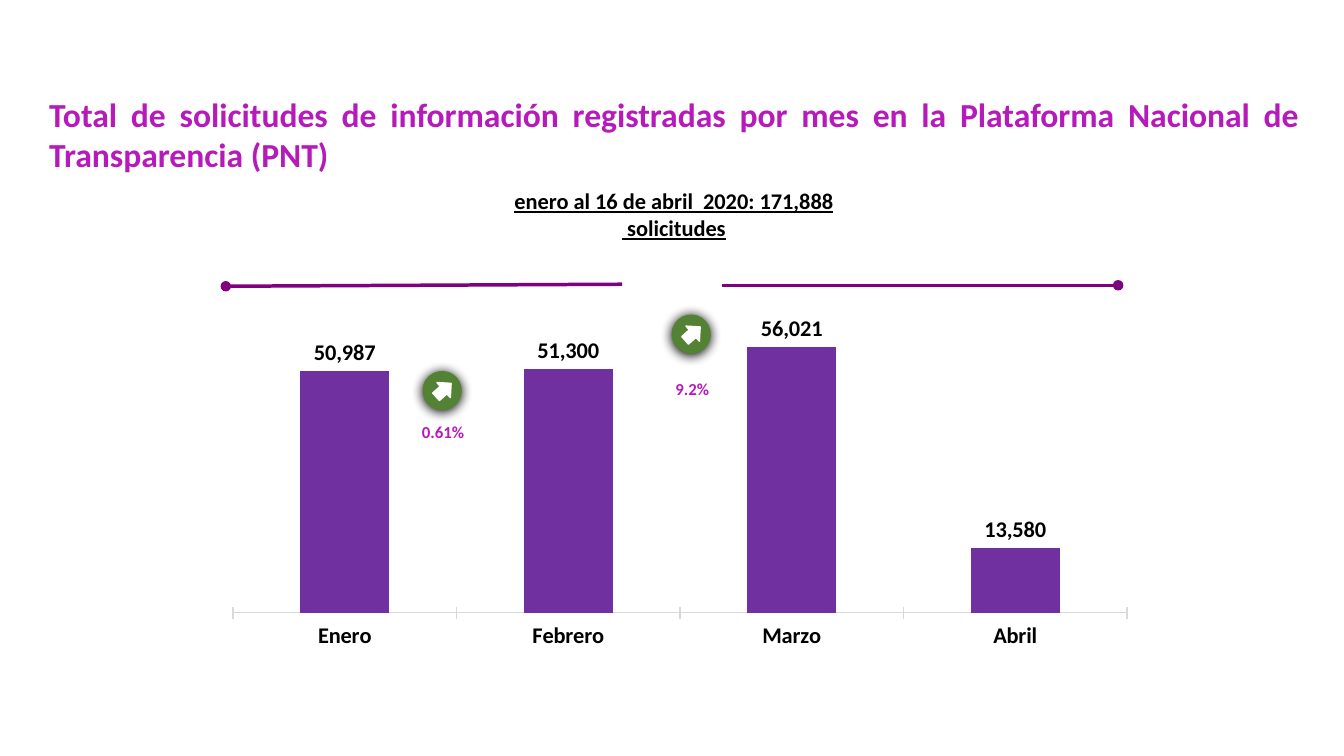
import pptx
import pptx.chart.data
import pptx.dml.color
import pptx.enum.chart
import pptx.enum.shapes
import pptx.enum.text
import pptx.oxml
import pptx.oxml.ns
import pptx.util

EMU_PER_PX = 9144  # 100 px to the inch
COLORS = {
    "title": "B61ABA", "text": "000000", "bar": "7030A0", "rule": "800080",
    "badge": "548235", "white": "FFFFFF", "axis": "D9D9D9",
}
ALIGN = pptx.enum.text.PP_ALIGN
SHAPES = pptx.enum.shapes.MSO_SHAPE


def px(*lengths):
    return [length * EMU_PER_PX for length in lengths]


def color(name):
    return pptx.dml.color.RGBColor.from_string(COLORS[name])


def element(xml):
    prefix, rest = xml.split(" ", 1) if " " in xml.split(">")[0] else xml.split(">", 1)
    glue = " " if " " in xml.split(">")[0] else ">"
    return pptx.oxml.parse_xml(f"{prefix} {pptx.oxml.ns.nsdecls('a', 'c')}{glue}{rest}")


class Slide:
    font_name = "Calibri"
    tilt = 318.4

    def __init__(self, deck):
        self.page = deck.slides.add_slide(deck.slide_layouts[6])

    def style(self, font, size, name):
        font.name, font.size, font.bold = self.font_name, pptx.util.Pt(size), True
        font.color.rgb = color(name)

    def text(self, place, lines, size, name, align=ALIGN.CENTER, underline=None, parent=None):
        box = (parent or self.page).shapes.add_textbox(*px(*place))
        frame = box.text_frame
        frame.word_wrap = True
        frame.auto_size = pptx.enum.text.MSO_AUTO_SIZE.SHAPE_TO_FIT_TEXT
        frame.text = lines
        for para in frame.paragraphs:
            para.alignment = align
            for span in para.runs:
                self.style(span.font, size, name)
                span.font.underline = underline

    def rule(self, *ends):
        """Draw a line with a round dot at its first end."""
        line = self.page.shapes.add_connector(
            pptx.enum.shapes.MSO_CONNECTOR.STRAIGHT, *px(*ends))
        line.line.color.rgb = color("rule")
        line.line.width = pptx.util.Pt(2.5)
        line.line._get_or_add_ln().append(element('<a:headEnd type="oval"/>'))
        line._element.spPr.append(element("<a:effectLst></a:effectLst>"))

    def shape(self, parent, kind, place, name):
        shape = parent.shapes.add_shape(kind, *px(*place))
        shape.rotation = self.tilt
        shape.shadow.inherit = False
        shape.fill.solid()
        shape.fill.fore_color.rgb = color(name)
        shape.line.fill.background()
        return shape

    def badge(self, left, top, label, label_top):
        """Draw a rising arrow in a shaded disc, grouped with its percentage."""
        group = self.page.shapes.add_group_shape()
        disc = self.shape(group, SHAPES.OVAL, (left, top, 39, 39), "badge")
        disc._element.spPr.find(pptx.oxml.ns.qn("a:effectLst")).append(element(
            '<a:outerShdw blurRad="107950" dist="12700" dir="5400000" algn="ctr" '
            'rotWithShape="0"><a:srgbClr val="000000"/></a:outerShdw>'))
        arrow = self.shape(group, SHAPES.RIGHT_ARROW, (left + 11, top + 9, 20, 20), "white")
        arrow.line.color.rgb = color("white")
        arrow.line.width = pptx.util.Pt(1)
        self.text((left - 22, label_top, 85, 30), label, 12, "title", parent=group)

    def column_chart(self, place, months, totals, maximum):
        data = pptx.chart.data.CategoryChartData(number_format="#,##0")
        data.categories = months
        data.add_series("Solicitudes", totals)
        kind = pptx.enum.chart.XL_CHART_TYPE.COLUMN_CLUSTERED
        chart = self.page.shapes.add_chart(kind, *px(*place), data).chart
        chart.has_legend = chart.has_title = False
        self.style(chart.font, 16, "text")

        plot = chart.plots[0]
        plot.gap_width, plot.vary_by_categories = 150, False
        fill = plot.series[0].format.fill
        fill.solid()
        fill.fore_color.rgb = color("bar")
        plot.has_data_labels = True
        labels = plot.data_labels
        labels.show_value = True
        labels.number_format, labels.number_format_is_linked = "#,##0", False
        labels.position = pptx.enum.chart.XL_LABEL_POSITION.OUTSIDE_END
        self.style(labels.font, 16, "text")

        values, names = chart.value_axis, chart.category_axis
        values.minimum_scale, values.maximum_scale = 0, maximum
        values.visible = False
        grid = values.major_gridlines.format.line
        grid.color.rgb, grid.width = color("white"), pptx.util.Pt(0.75)
        names.major_tick_mark = pptx.enum.chart.XL_TICK_MARK.CROSS
        names.format.line.color.rgb = color("axis")
        names.format.line.width = pptx.util.Pt(1)
        self.style(names.tick_labels.font, 16, "text")
        self.set_plot_area(chart, x=0.023, y=0.044, w=0.967, h=0.812)

    def set_plot_area(self, chart, **fractions):
        area = chart._chartSpace.chart.plotArea
        for layout in area.findall(pptx.oxml.ns.qn("c:layout")):
            area.remove(layout)
        modes = '<c:xMode val="edge"/><c:yMode val="edge"/>'
        sizes = "".join(f'<c:{key} val="{part}"/>' for key, part in fractions.items())
        area.insert(0, element(
            '<c:layout><c:manualLayout><c:layoutTarget val="inner"/>'
            f"{modes}{sizes}</c:manualLayout></c:layout>"))


def main():
    deck = pptx.Presentation()
    deck.slide_width, deck.slide_height = px(1333, 750)
    slide = Slide(deck)
    slide.column_chart((210, 310, 917, 348), ("Enero", "Febrero", "Marzo", "Abril"),
                       (50987, 51300, 56021, 13580), 60000)
    slide.badge(419, 368, "0.61%", 413)
    slide.text((39, 88, 1260, 91),
               "Total de solicitudes de información registradas por mes en la "
               "Plataforma Nacional de Transparencia (PNT)",
               24, "title", ALIGN.JUSTIFY)
    slide.text((488, 181, 361, 64), "enero al 16 de abril  2020: 171,888\n solicitudes",
               16, "text", underline=True)
    slide.rule(224, 284, 617, 282)
    slide.rule(1109, 283, 716, 283)
    slide.badge(666, 312, "9.2%", 371)
    deck.save("out.pptx")


if __name__ == "__main__":
    main()
